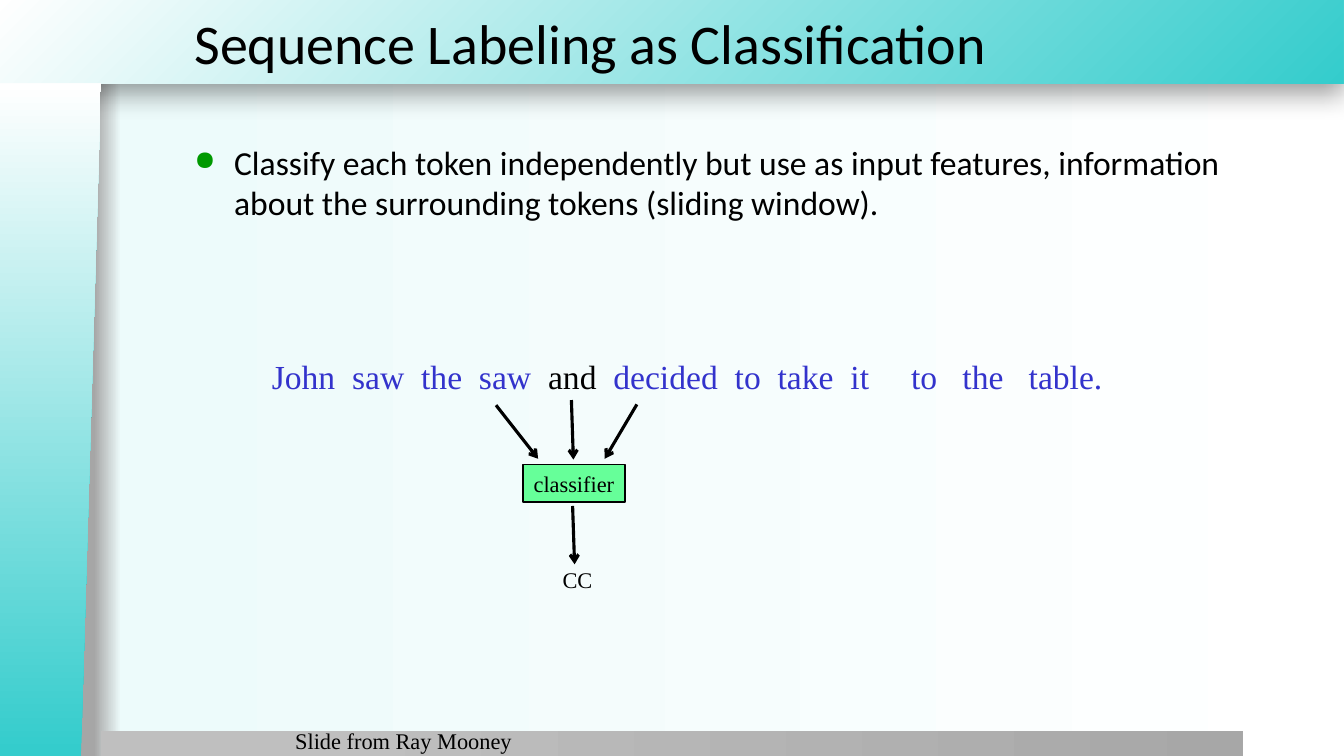
"""Build the slide on sequence labeling as classification."""
from dataclasses import dataclass
from typing import Optional

from lxml import etree
from pptx import Presentation
from pptx.dml.color import RGBColor
from pptx.enum import shapes, text
from pptx.oxml import ns
from pptx.util import Cm, Pt

Box = tuple[float, float, float, float]
Point = tuple[float, float]
Stops = tuple[tuple[int, str], ...]


@dataclass(frozen=True)
class Theme:
    teal: str = "34CCCC"
    white: str = "FFFFFF"
    mist: str = "EDFBFB"
    edge: str = "A6A6A6"
    bar_light: str = "BFBFBF"
    bar_dark: str = "A7A7A7"
    ink: str = "000000"
    bullet: str = "009900"
    word: str = "3333CC"
    box: str = "66FF99"
    sans: str = "Calibri"
    serif: str = "Times New Roman"
    title: int = 40
    body: int = 24
    small: int = 16
    arrow: float = 2.25
    outline: float = 1


T = Theme()


@dataclass(frozen=True)
class Panel:
    kind: shapes.MSO_SHAPE
    box: Box
    stops: Stops
    rotation: int = 0
    flip: bool = False
    radial: bool = False
    shadow: bool = False


@dataclass(frozen=True)
class Label:
    words: str
    box: Box
    font: str = T.serif
    size: int = T.small
    centered: bool = False
    middle: bool = False
    wrap: bool = True
    fill: Optional[str] = None
    bullet: bool = False


@dataclass(frozen=True)
class Word:
    words: str
    color: str = T.word
    gap: int = 2


PANELS = (
    Panel(shapes.MSO_SHAPE.RECTANGLE, (-0.03, 0, 33.88, 2.11),
          ((0, T.teal), (100, T.white)), radial=True, shadow=True),
    Panel(shapes.MSO_SHAPE.RECTANGLE, (2.54, 18.42, 28.78, 0.66),
          ((20, T.bar_light), (100, T.bar_dark))),
    Panel(shapes.MSO_SHAPE.FLOWCHART_MANUAL_INPUT, (-7.21, 9.32, 16.97, 2.54),
          ((1, T.teal), (100, T.white)), rotation=270, flip=True),
)
HEADINGS = (
    Label("Sequence Labeling as Classification", (4.65, 0, 29.24, 2.11),
          T.sans, T.title, middle=True),
    Label("Classify each token independently but use as input features, "
          "information about the surrounding tokens (sliding window).",
          (4.65, 3.45, 26.67, 14.71), T.sans, T.body, bullet=True),
)
SENTENCE = Label("", (6.6, 8.84, 21.62, 1.3), size=T.body, wrap=False)
WORDS = (
    Word("John"), Word("saw"), Word("the"), Word("saw"), Word("and", T.ink),
    Word("decided"), Word("to"), Word("take"), Word("it", gap=5),
    Word("to", gap=3), Word("the", gap=3), Word("table.", gap=0),
)
DIAGRAM = (
    Label("classifier", (13.18, 11.71, 2.57, 0.94), centered=True,
          middle=True, wrap=False, fill=T.box),
    Label("CC", (13.92, 14.15, 1.27, 0.94), centered=True, wrap=False),
    Label("Slide from Ray Mooney", (7.19, 18.21, 8.69, 0.64)),
)
ARROWS: tuple[tuple[Point, Point], ...] = (
    ((12.5, 10.21), (13.56, 11.56)),
    ((16.05, 10.19), (15.24, 11.56)),
    ((14.4, 10.08), (14.45, 11.58)),
    ((14.43, 12.75), (14.48, 14.22)),
)


def rgb(color: str) -> RGBColor:
    """Turn a hex string into a colour."""
    return RGBColor.from_string(color)


def add(parent, tag: str, **attrs):
    """Append a DrawingML child element."""
    return etree.SubElement(parent, ns.qn(f"a:{tag}"),
                            {k: str(v) for k, v in attrs.items()})


def paint_gradient(owner, fill, stops: Stops, radial: bool = False) -> None:
    """Fill a shape or the background with a linear or corner gradient."""
    fill.gradient()
    grad = owner.element.find(f".//{ns.qn('a:gradFill')}")
    for child in list(grad):
        grad.remove(child)
    grad.set("rotWithShape", "1")
    gs_list = add(grad, "gsLst")
    for pos, color in stops:
        add(add(gs_list, "gs", pos=pos * 1000), "srgbClr", val=color)
    if radial:
        add(add(grad, "path", path="circle"), "fillToRect", l=100000, t=100000)
    else:
        add(grad, "lin", ang=0, scaled=0)


def draw_panel(slide, panel: Panel) -> None:
    """Draw one gradient panel of the frame."""
    sp = slide.shapes.add_shape(panel.kind, *map(Cm, panel.box))
    sp.shadow.inherit = False
    sp.line.fill.background()
    sp.rotation = panel.rotation
    if panel.flip:
        sp.element.spPr.find(ns.qn("a:xfrm")).set("flipV", "1")
    paint_gradient(sp, sp.fill, panel.stops, panel.radial)
    if panel.shadow:
        effects = sp.element.spPr.find(ns.qn("a:effectLst"))
        outer = add(effects, "outerShdw", blurRad=Pt(20), dist=Pt(6),
                    dir=5400000, algn="t", rotWithShape=0)
        add(add(outer, "srgbClr", val=T.ink), "alpha", val=40000)


def draw_label(slide, label: Label):
    """Draw one text label and return its paragraph."""
    box = map(Cm, label.box)
    if label.fill:
        sp = slide.shapes.add_shape(shapes.MSO_SHAPE.RECTANGLE, *box)
        sp.shadow.inherit = False
        sp.fill.solid()
        sp.fill.fore_color.rgb = rgb(label.fill)
        sp.line.color.rgb = rgb(T.ink)
        sp.line.width = Pt(T.outline)
    else:
        sp = slide.shapes.add_textbox(*box)
    tf = sp.text_frame
    tf.word_wrap = label.wrap
    tf.auto_size = (text.MSO_AUTO_SIZE.NONE if label.wrap
                    else text.MSO_AUTO_SIZE.SHAPE_TO_FIT_TEXT)
    tf.vertical_anchor = (text.MSO_ANCHOR.MIDDLE if label.middle
                          else text.MSO_ANCHOR.TOP)
    p = tf.paragraphs[0]
    p.alignment = text.PP_ALIGN.CENTER if label.centered else text.PP_ALIGN.LEFT
    if label.bullet:
        props = p._p.get_or_add_pPr()
        props.set("marL", str(Cm(1)))
        props.set("indent", str(Cm(-1)))
        add(add(props, "buClr"), "srgbClr", val=T.bullet)
        add(props, "buSzPct", val=80000)
        add(props, "buChar", char="●")
    p.font.name, p.font.size = label.font, Pt(label.size)
    if label.words:
        p.font.color.rgb = rgb(T.ink)
        p.add_run().text = label.words
    return p


def draw_sentence(slide) -> None:
    """Draw the tagged sentence, widening each space to its gap."""
    p = draw_label(slide, SENTENCE)
    for word in WORDS:
        r = p.add_run()
        r.text = word.words
        r.font.color.rgb = rgb(word.color)
        if word.gap:
            space = p.add_run()
            space.text = " "
            extra = (word.gap - 1) * T.body * 100 // 4
            space._r.get_or_add_rPr().set("spc", str(extra))


def draw_arrow(slide, start: Point, end: Point) -> None:
    """Draw one open-headed arrow."""
    line = slide.shapes.add_connector(shapes.MSO_CONNECTOR.STRAIGHT,
                                      *map(Cm, start + end))
    line.line.color.rgb = rgb(T.ink)
    line.line.width = Pt(T.arrow)
    add(line.line._get_or_add_ln(), "tailEnd", type="arrow")
    add(line.element.spPr, "effectLst")


def main() -> None:
    """Build and save the slide."""
    prs = Presentation()
    prs.slide_width, prs.slide_height = Cm(33.87), Cm(19.05)
    slide = prs.slides.add_slide(prs.slide_layouts[6])
    paint_gradient(slide, slide.background.fill,
                   ((7, T.edge), (9, T.mist), (100, T.white)))
    for panel in PANELS:
        draw_panel(slide, panel)
    for label in HEADINGS:
        draw_label(slide, label)
    draw_sentence(slide)
    for label in DIAGRAM:
        draw_label(slide, label)
    for start, end in ARROWS:
        draw_arrow(slide, start, end)
    prs.save("out.pptx")


if __name__ == "__main__":
    main()
